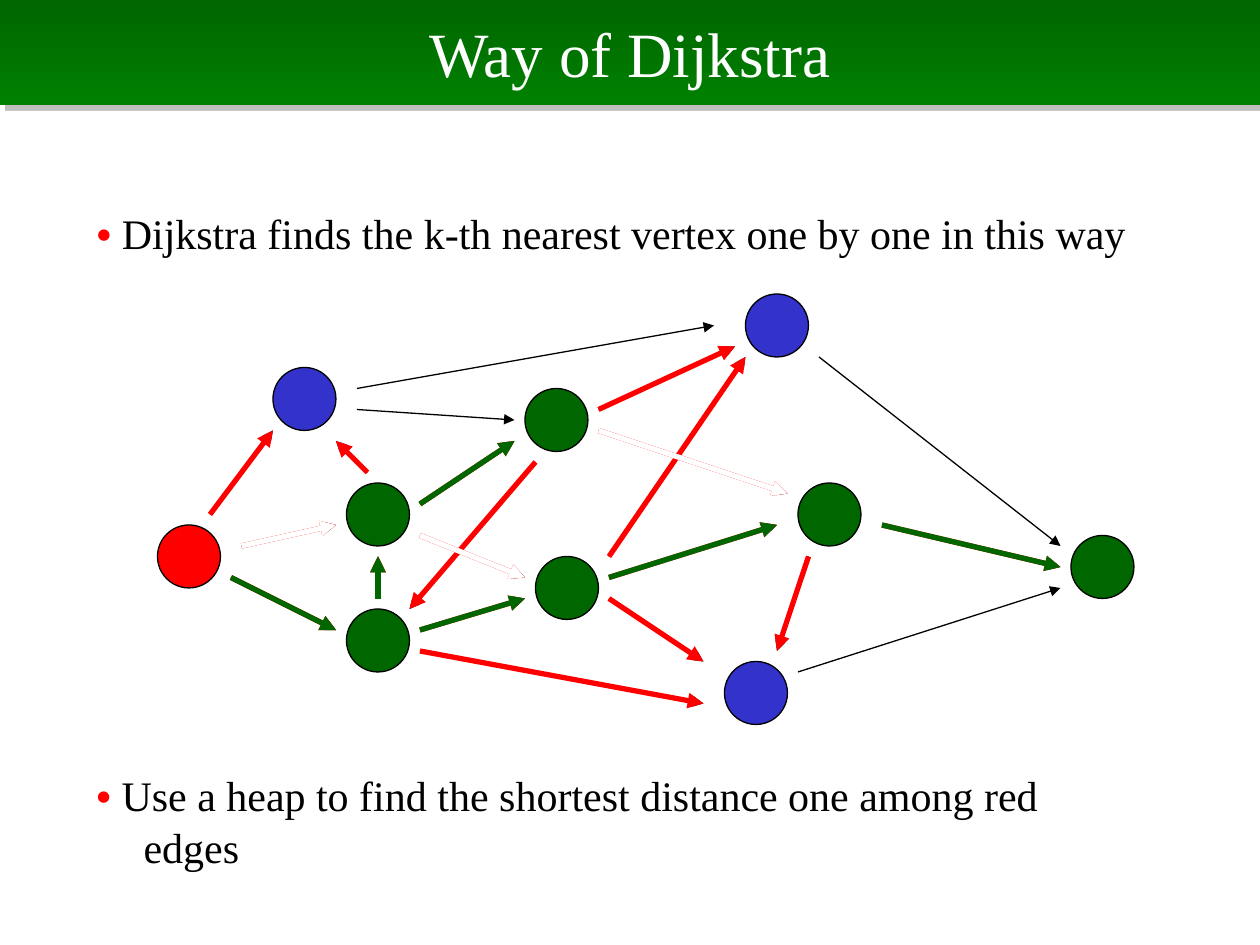
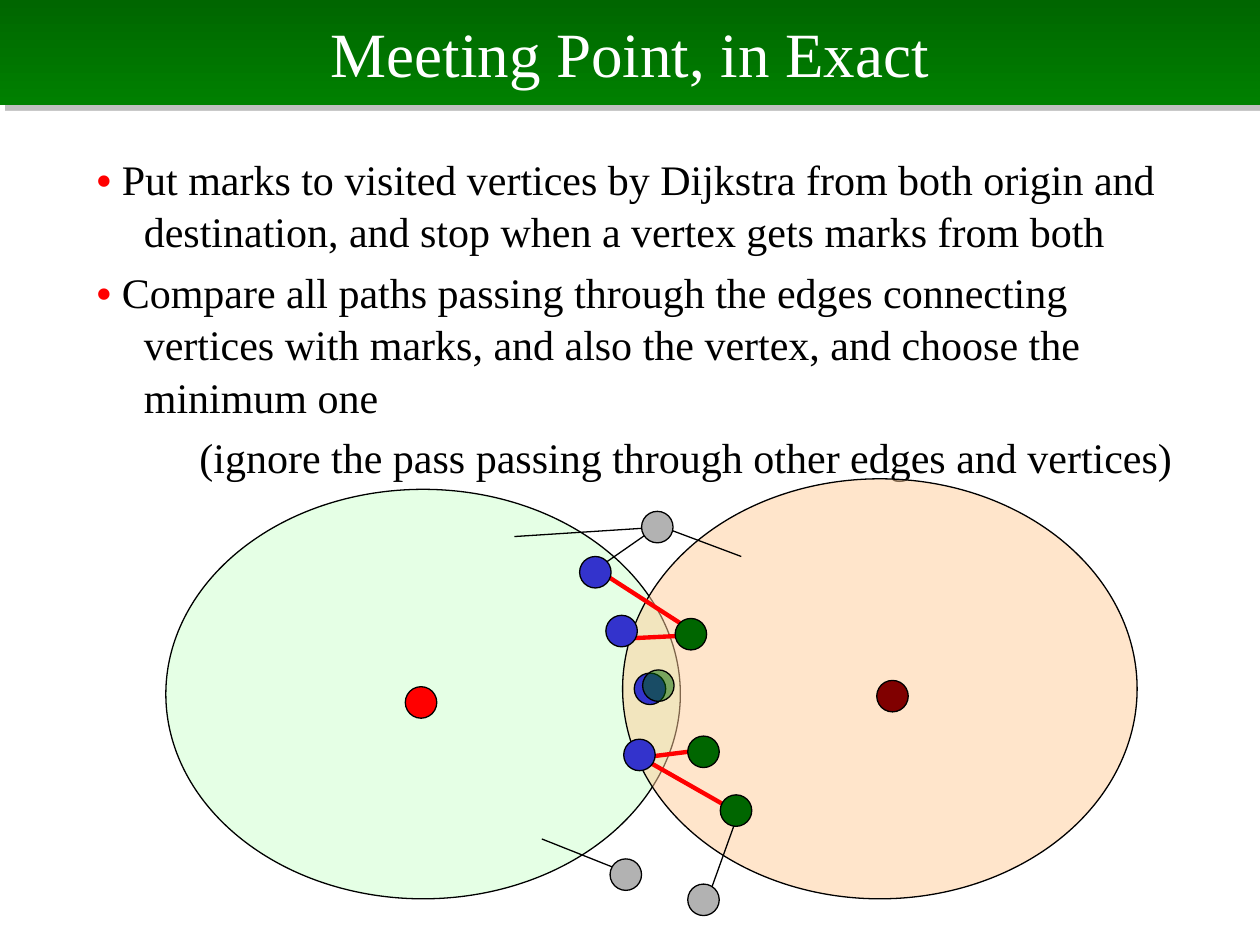
from dataclasses import dataclass

from lxml.etree import SubElement
from pptx import Presentation
from pptx.dml.color import RGBColor
from pptx.enum.shapes import MSO_CONNECTOR, MSO_SHAPE
from pptx.enum.text import MSO_ANCHOR, MSO_AUTO_SIZE, PP_ALIGN
from pptx.oxml.ns import qn
from pptx.slide import Slide
from pptx.text.text import TextFrame
from pptx.util import Emu, Pt

PX = 7620
WIDTH, HEIGHT, BAND = 1200, 900, 100
FONT = "Times New Roman"
HANG, ASIDE_INDENT = 45, 98
VERTEX, MARK = 60, 30
COLORS = {
    "black": "000000",
    "white": "FFFFFF",
    "red": "FF0000",
    "maroon": "800000",
    "blue": "3333CC",
    "green": "006600",
    "band_end": "008000",
    "shadow": "808080",
    "grey": "B2B2B2",
    "origin_area": "CCFFCC",
    "goal_area": "FFCC99",
}
STAGES = {
    "black": ["black"],
    "red": ["black", "red"],
    "green": ["black", "red", "green"],
    "white": ["black", "red", "white"],
}


@dataclass
class Item:
    text: str
    bullet: bool = True


@dataclass
class Oval:
    x: int
    y: int
    w: int
    h: int
    color: str
    alpha: int = 100


@dataclass
class Edge:
    x1: int
    y1: int
    x2: int
    y2: int
    color: str


def px(n: int) -> Emu:
    return Emu(n * PX)


def rgb(name: str) -> RGBColor:
    return RGBColor.from_string(COLORS[name])


def place(sp, x: int, y: int, w: int, h: int) -> None:
    sp.left, sp.top, sp.width, sp.height = px(x), px(y), px(w), px(h)


def style_run(r, size: int, color: str, bold: bool = False) -> None:
    r.font.name = FONT
    r.font.size = Pt(size)
    r.font.bold = bold
    r.font.color.rgb = rgb(color)


def add_title(s: Slide, text: str) -> None:
    sp = s.shapes.title
    place(sp, 0, 0, WIDTH, BAND)
    sp.fill.gradient()
    sp.fill.gradient_angle = 270
    for stop, color in zip(sp.fill.gradient_stops, ("green", "band_end")):
        stop.color.rgb = rgb(color)
    effects = SubElement(sp.element.spPr, qn("a:effectLst"))
    shadow = SubElement(effects, qn("a:outerShdw"), dist=str(Pt(4.2)),
                        dir="2700000", algn="ctr", rotWithShape="0")
    clr = SubElement(shadow, qn("a:srgbClr"), val=COLORS["shadow"])
    SubElement(clr, qn("a:alpha"), val="50000")
    tf = sp.text_frame
    tf.text = text
    tf.auto_size = MSO_AUTO_SIZE.NONE
    tf.vertical_anchor = MSO_ANCHOR.MIDDLE
    p = tf.paragraphs[0]
    p.alignment = PP_ALIGN.CENTER
    style_run(p.runs[0], 36, "white")


def write_items(tf: TextFrame, items: list[Item]) -> None:
    tf.word_wrap = True
    tf.auto_size = MSO_AUTO_SIZE.NONE
    tf.vertical_anchor = MSO_ANCHOR.TOP
    for i, item in enumerate(items):
        p = tf.add_paragraph() if i else tf.paragraphs[0]
        p.alignment = PP_ALIGN.LEFT
        p.line_spacing = 1.04
        p.space_before = Pt(4.8)
        pPr = p._p.get_or_add_pPr()
        pPr.set("marL", str(px(HANG if item.bullet else ASIDE_INDENT)))
        pPr.set("indent", str(px(-HANG if item.bullet else 0)))
        SubElement(pPr, qn("a:buNone"))
        if item.bullet:
            p.text = "• "
            style_run(p.runs[0], 24, "red", True)
        r = p.add_run()
        r.text = item.text
        style_run(r, 24, "black")


def add_oval(s: Slide, oval: Oval) -> None:
    sp = s.shapes.add_shape(MSO_SHAPE.OVAL, px(oval.x), px(oval.y), px(oval.w), px(oval.h))
    sp.shadow.inherit = False
    sp.fill.solid()
    sp.fill.fore_color.rgb = rgb(oval.color)
    if oval.alpha < 100:
        clr = sp.element.spPr.find(qn("a:solidFill")).find(qn("a:srgbClr"))
        SubElement(clr, qn("a:alpha"), val=str(oval.alpha * 1000))
    sp.line.color.rgb = rgb("black")
    sp.line.width = Pt(0.75)


def add_circles(s: Slide, size: int, circles: list[tuple[int, int, str]]) -> None:
    for x, y, color in circles:
        add_oval(s, Oval(x, y, size, size, color))


def add_edge(s: Slide, edge: Edge, color: str, weight: float, arrow: bool) -> None:
    cx = s.shapes.add_connector(MSO_CONNECTOR.STRAIGHT, px(edge.x1), px(edge.y1),
                                px(edge.x2), px(edge.y2))
    cx.line.color.rgb = rgb(color)
    cx.line.width = Pt(0.75 if color == "black" else weight)
    if arrow:
        SubElement(cx.line._get_or_add_ln(), qn("a:tailEnd"), type="triangle")
    SubElement(cx._element.spPr, qn("a:effectLst"))


def new_slide(prs, title: str, box: tuple[int, int, int, int], items: list[Item]) -> Slide:
    s = prs.slides.add_slide(prs.slide_layouts[1])
    add_title(s, title)
    body = s.placeholders[1]
    place(body, *box)
    write_items(body.text_frame, items)
    return s


def dijkstra_slide(prs) -> None:
    s = new_slide(prs, "Way of Dijkstra", (80, 190, 1020, 440), [
        Item("Dijkstra finds the k-th nearest vertex one by one in this way"),
    ])
    edges = [
        Edge(340, 390, 490, 400, "black"),
        Edge(400, 480, 490, 420, "green"),
        Edge(400, 510, 500, 550, "white"),
        Edge(400, 600, 500, 570, "green"),
        Edge(400, 620, 670, 670, "red"),
        Edge(340, 370, 680, 310, "black"),
        Edge(570, 390, 700, 330, "red"),
        Edge(570, 410, 750, 470, "white"),
        Edge(580, 550, 740, 500, "green"),
        Edge(580, 570, 670, 630, "red"),
        Edge(220, 550, 320, 600, "green"),
        Edge(200, 490, 260, 410, "red"),
        Edge(780, 340, 1010, 520, "black"),
        Edge(840, 500, 1010, 540, "green"),
        Edge(230, 520, 320, 500, "white"),
        Edge(580, 530, 710, 340, "red"),
        Edge(760, 640, 1010, 560, "black"),
        Edge(770, 530, 740, 620, "red"),
        Edge(510, 440, 390, 580, "red"),
        Edge(360, 570, 360, 530, "green"),
        Edge(350, 450, 320, 420, "red"),
    ]
    for stage in range(3):
        for edge in edges:
            for color in STAGES[edge.color][stage:stage + 1]:
                add_edge(s, edge, color, 3, True)
    add_circles(s, VERTEX, [
        (150, 500, "red"),
        (260, 350, "blue"), (690, 630, "blue"), (710, 280, "blue"),
        (330, 580, "green"), (330, 460, "green"), (500, 370, "green"),
        (510, 530, "green"), (760, 460, "green"), (1020, 510, "green"),
    ])
    tb = s.shapes.add_textbox(px(80), px(725), px(1020), px(113))
    write_items(tb.text_frame, [
        Item("Use a heap to find the shortest distance one among red edges"),
    ])


def meeting_slide(prs) -> None:
    s = new_slide(prs, "Meeting Point, in Exact", (80, 138, 1049, 293), [
        Item("Put marks to visited vertices by Dijkstra from both origin and "
             "destination, and stop when a vertex gets marks from both"),
        Item("Compare all paths passing through the edges connecting vertices "
             "with marks, and also the vertex, and choose the minimum one"),
        Item("(ignore the pass passing through other edges and vertices)", False),
    ])
    add_oval(s, Oval(158, 466, 490, 390, "origin_area", 50))
    add_oval(s, Oval(593, 456, 490, 400, "goal_area", 50))
    add_circles(s, MARK, [(386, 654, "red"), (835, 648, "maroon"), (604, 641, "blue")])
    add_oval(s, Oval(612, 638, MARK, MARK, "green", 50))
    for edge in [
        Edge(608, 720, 701, 773, "red"),
        Edge(608, 722, 671, 714, "red"),
        Edge(599, 608, 660, 605, "red"),
        Edge(571, 544, 661, 602, "red"),
        Edge(674, 856, 702, 778, "black"),
        Edge(594, 830, 516, 799, "black"),
        Edge(706, 530, 626, 500, "black"),
        Edge(624, 503, 568, 542, "black"),
        Edge(630, 502, 490, 511, "black"),
    ]:
        add_edge(s, edge, edge.color, 2.5, False)
    add_circles(s, MARK, [
        (577, 586, "blue"), (552, 530, "blue"), (594, 704, "blue"),
        (686, 757, "green"), (655, 701, "green"), (643, 589, "green"),
        (581, 818, "grey"), (655, 842, "grey"), (611, 487, "grey"),
    ])


def main() -> None:
    prs = Presentation()
    prs.slide_width, prs.slide_height = px(WIDTH), px(HEIGHT)
    dijkstra_slide(prs)
    meeting_slide(prs)
    prs.save("out.pptx")


if __name__ == "__main__":
    main()
